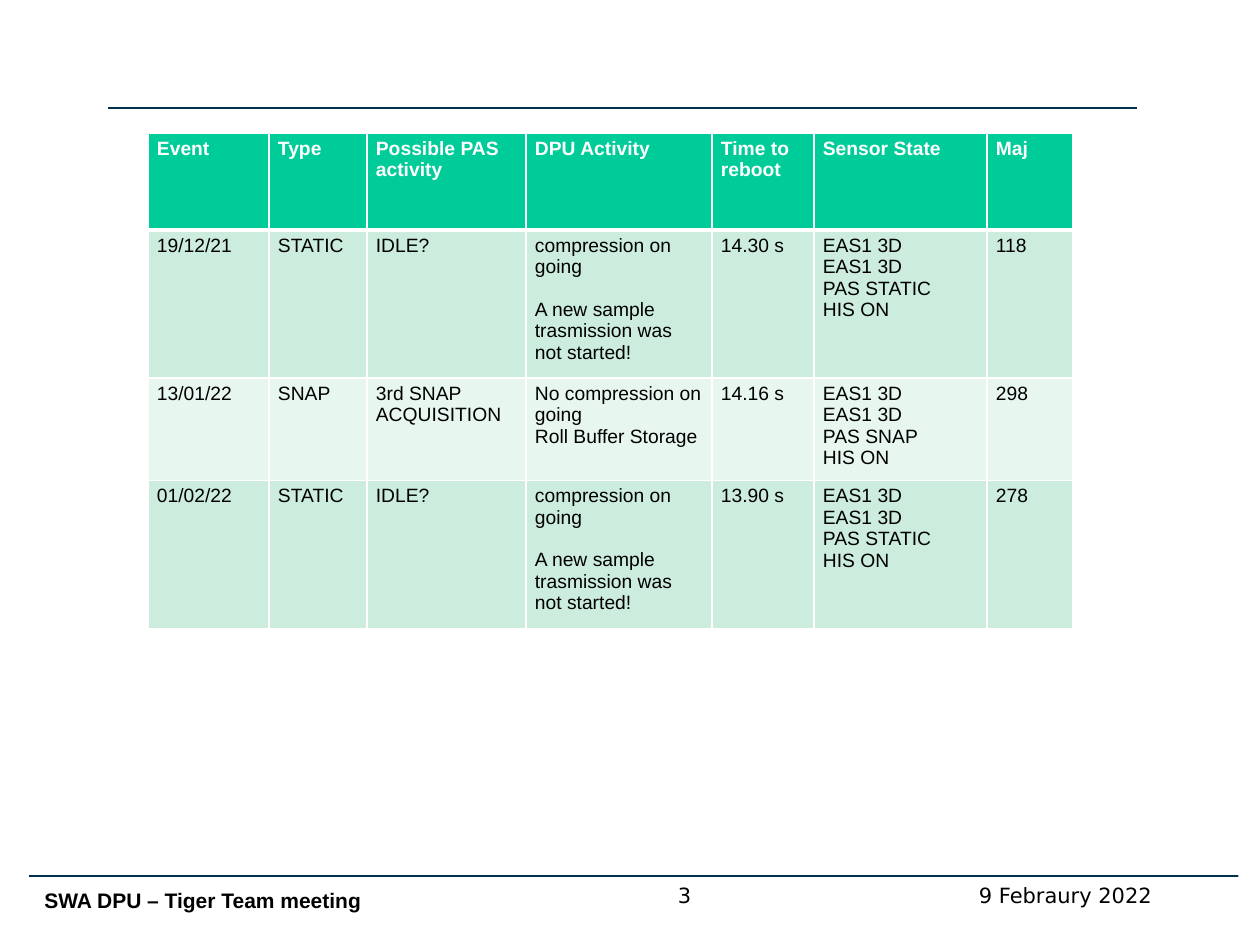
from lxml.etree import SubElement
from pptx import Presentation
from pptx.dml.color import RGBColor
from pptx.enum.shapes import MSO_CONNECTOR
from pptx.enum.text import MSO_ANCHOR, PP_ALIGN
from pptx.oxml.ns import qn
from pptx.util import Emu, Pt

PX = 914400 // 126
SLIDE_SIZE = (1260, 945)

# Content: a cell is a list of paragraphs
HEADERS = ["Event", "Type", "Possible PAS activity", "DPU Activity",
           "Time to reboot", "Sensor State", "Maj"]
COMPRESSION = ["compression on going", "A new sample trasmission was not started!"]
STATIC_SENSORS = ["EAS1 3D", "EAS1 3D", "PAS STATIC", "HIS ON"]
SNAP_SENSORS = ["EAS1 3D", "EAS1 3D", "PAS SNAP", "HIS ON"]
EVENTS = [
    [["19/12/21"], ["STATIC"], ["IDLE?"], COMPRESSION, ["14.30 s"], STATIC_SENSORS, ["118"]],
    [["13/01/22"], ["SNAP"], ["3rd SNAP ACQUISITION"],
     ["No compression on going", "Roll Buffer Storage"], ["14.16 s"], SNAP_SENSORS, ["298"]],
    [["01/02/22"], ["STATIC"], ["IDLE?"], COMPRESSION, ["13.90 s"], STATIC_SENSORS, ["278"]],
]
TABLE_ORIGIN = (148, 133)
COLUMN_WIDTHS = [121, 98, 159, 186, 102, 173, 86]
ROW_HEIGHTS = [97, 148, 102, 148]
HEADER_FILL = "00CC99"
BAND_FILLS = ["CCECDE", "E7F6EF"]

# Rules: left, right, y, colour
RULES = [(32, 1239, 876, "B2B2B2"), (29, 1238, 876, "00324B"), (108, 1137, 108, "00324B")]

# Footer: text, box, format
FOOTERS = [
    ("SWA DPU – Tiger Team meeting", (32, 869, 542, 50),
     dict(font="Arial", bold=True, anchor=MSO_ANCHOR.BOTTOM)),
    ("9 Febraury 2022", (896, 876, 339, 38), dict(font="DejaVu Sans", align=PP_ALIGN.CENTER)),
    ("3", (650, 876, 69, 38), dict(font="DejaVu Sans", align=PP_ALIGN.CENTER)),
]


def px(value):
    return Emu(value * PX)


def color(value):
    return RGBColor.from_string(value)


def write(frame, paragraphs, font="Arial", size=12, ink="000000", bold=False,
          align=PP_ALIGN.LEFT, anchor=MSO_ANCHOR.TOP, gap=0):
    frame.word_wrap = True
    frame.vertical_anchor = anchor
    for index, text in enumerate(paragraphs):
        paragraph = frame.paragraphs[0] if index == 0 else frame.add_paragraph()
        paragraph.alignment = align
        if index and gap:
            paragraph.space_before = Pt(gap)
        run = paragraph.add_run()
        run.text = text
        run.font.name = font
        run.font.size = Pt(size)
        run.font.bold = bold
        run.font.color.rgb = color(ink)


def set_borders(cell, bottom, top):
    properties = cell._tc.get_or_add_tcPr()
    for index, (side, width) in enumerate([("L", 1), ("R", 1), ("T", top), ("B", bottom)]):
        line = properties.makeelement(qn(f"a:ln{side}"), {"w": str(Pt(width))})
        fill = SubElement(line, qn("a:solidFill"))
        SubElement(fill, qn("a:srgbClr"), val="FFFFFF")
        properties.insert(index, line)


def add_rule(slide, left, right, y, ink):
    connector = slide.shapes.add_connector(
        MSO_CONNECTOR.STRAIGHT, px(left), px(y), px(right), px(y))
    connector.line.color.rgb = color(ink)
    connector.line.width = Pt(1)
    SubElement(connector._element.spPr, qn("a:effectLst"))


def add_event_table(slide):
    rows = [[[header] for header in HEADERS]] + EVENTS
    table = slide.shapes.add_table(
        len(rows), len(HEADERS), *map(px, TABLE_ORIGIN),
        px(sum(COLUMN_WIDTHS)), px(sum(ROW_HEIGHTS))).table
    table.horz_banding = False
    for column, width in zip(table.columns, COLUMN_WIDTHS):
        column.width = px(width)
    for row, height in zip(table.rows, ROW_HEIGHTS):
        row.height = px(height)
    for row_index, row in enumerate(rows):
        is_header = row_index == 0
        fill = HEADER_FILL if is_header else BAND_FILLS[(row_index - 1) % 2]
        for column_index, paragraphs in enumerate(row):
            cell = table.cell(row_index, column_index)
            cell.margin_left = cell.margin_right = px(9)
            cell.margin_top = cell.margin_bottom = px(5)
            cell.fill.solid()
            cell.fill.fore_color.rgb = color(fill)
            set_borders(cell, bottom=3 if is_header else 1, top=3 if row_index == 1 else 1)
            write(cell.text_frame, paragraphs, size=11, bold=is_header,
                  ink="FFFFFF" if is_header else "000000",
                  gap=12 if paragraphs is COMPRESSION else 0)


def main():
    presentation = Presentation()
    presentation.slide_width, presentation.slide_height = map(px, SLIDE_SIZE)
    slide = presentation.slides.add_slide(presentation.slide_layouts[6])
    for rule in RULES:
        add_rule(slide, *rule)
    for text, box, style in FOOTERS:
        write(slide.shapes.add_textbox(*map(px, box)).text_frame, [text], **style)
    add_event_table(slide)
    presentation.save("out.pptx")


if __name__ == "__main__":
    main()
